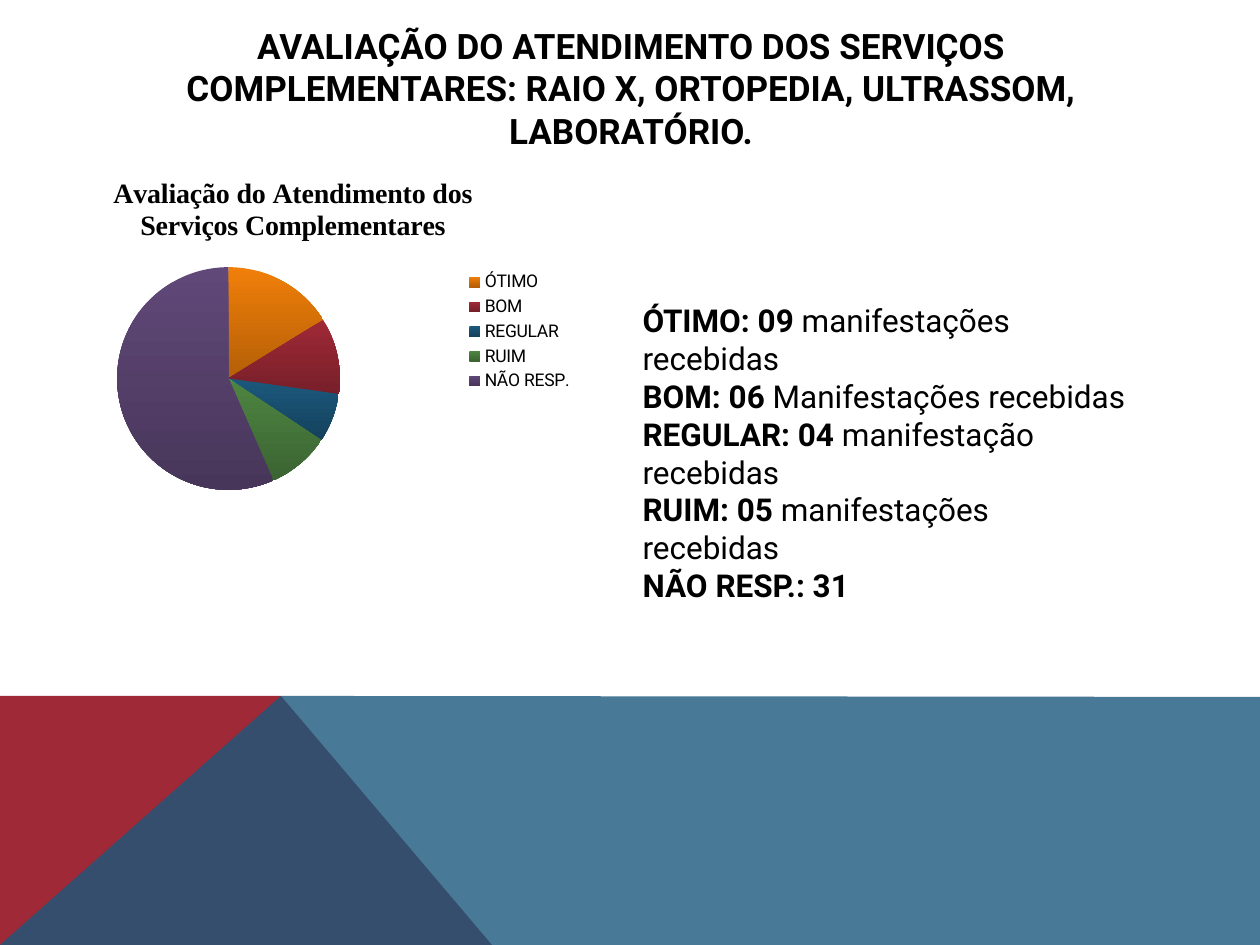
from dataclasses import dataclass

from lxml import etree
from pptx import Presentation
from pptx import util as u
from pptx.chart.data import CategoryChartData
from pptx.dml.color import RGBColor
from pptx.enum import chart as ch, text
from pptx.oxml.ns import qn

PX = u.Inches(1) / 126


@dataclass(frozen=True)
class Theme:
    """Colours, fonts and type sizes of the slide."""
    ink: str = "000000"
    red: str = "9F2936"
    blue: str = "1B587C"
    slices: tuple = ("F07F09", "9F2936", "1B587C", "4E8542", "604878")
    sans: str = "Roboto"
    serif: str = "Times New Roman"
    title: int = 20
    body: int = 18
    chart_title: int = 16
    legend: int = 10


T = Theme()
RESULTS = [
    ("ÓTIMO: 09", " manifestações recebidas"),
    ("BOM: 06", " Manifestações recebidas"),
    ("REGULAR: 04", " manifestação recebidas"),
    ("RUIM: 05", " manifestações recebidas"),
    ("NÃO RESP.: 31", ""),
]
SHARES = {"ÓTIMO": 16, "BOM": 11, "REGULAR": 7, "RUIM": 9, "NÃO RESP.": 56}


def px(n):
    """Turn pixels into EMU."""
    return u.Emu(round(n * PX))


def place(sp, x, y, w, h):
    """Set the position and size of a shape."""
    sp.left, sp.top, sp.width, sp.height = map(px, (x, y, w, h))


def style(font, size, name=T.sans, bold=False):
    """Format a font in the ink colour."""
    font.size, font.name, font.bold = u.Pt(size), name, bold
    font.color.rgb = RGBColor.from_string(T.ink)


def add_run(p, words, size, name=T.sans, bold=False):
    """Append a formatted run to a paragraph."""
    r = p.add_run()
    r.text = words
    style(r.font, size, name, bold)


def add_band(s, points, color, alpha=100):
    """Draw a filled polygon with the given opacity in percent."""
    fb = s.shapes.build_freeform(*points[0], scale=PX)
    fb.add_line_segments(points[1:], close=True)
    sp = fb.convert_to_shape()
    sp.shadow.inherit = False
    sp.line.fill.background()
    sp.fill.solid()
    sp.fill.fore_color.rgb = RGBColor.from_string(color)
    if alpha < 100:
        clr = sp.fill._xPr.find(".//" + qn("a:srgbClr"))
        etree.SubElement(clr, qn("a:alpha"), val=str(alpha * 1000))


def fill_title(sp, words):
    """Write the slide title."""
    place(sp, 113, 50, 1036, 76)
    tf = sp.text_frame
    tf.auto_size = text.MSO_AUTO_SIZE.NONE
    tf.vertical_anchor = text.MSO_ANCHOR.MIDDLE
    p = tf.paragraphs[0]
    p.alignment = text.PP_ALIGN.CENTER
    add_run(p, words, T.title, bold=True)


def fill_list(sp, rows):
    """Write unbulleted rows with a bold label and a plain remainder."""
    place(sp, 630, 295, 512, 320)
    tf = sp.text_frame
    tf.auto_size = text.MSO_AUTO_SIZE.NONE
    for i, (label, rest) in enumerate(rows):
        p = tf.add_paragraph() if i else tf.paragraphs[0]
        p.space_before = u.Pt(0)
        pPr = p._p.get_or_add_pPr()
        pPr.set("marL", "0")
        pPr.set("indent", "0")
        etree.SubElement(pPr, qn("a:buNone"))
        add_run(p, label, T.body, bold=True)
        if rest:
            add_run(p, rest, T.body)


def add_pie(s, title, shares):
    """Add the pie chart with its title, legend and shaded slices."""
    data = CategoryChartData()
    data.categories = list(shares)
    data.add_series("Series 1", list(shares.values()))
    chart = s.shapes.add_chart(
        ch.XL_CHART_TYPE.PIE, 0, px(157), px(586), px(349), data).chart
    style(chart.font, T.legend)
    chart.has_title = True
    add_run(chart.chart_title.text_frame.paragraphs[0], title,
            T.chart_title, T.serif, True)
    chart.has_legend = True
    chart.legend.position = ch.XL_LEGEND_POSITION.RIGHT
    chart.legend.include_in_layout = True
    plot = chart.plots[0]
    plot.vary_by_categories = True
    for i, color in enumerate(T.slices):
        fmt = plot.series[0].points[i].format
        fmt.line.fill.background()
        fmt.fill.gradient()
        fmt.fill.gradient_angle = 270
        for stop, shade in zip(fmt.fill.gradient_stops, (0, -0.25)):
            stop.color.rgb = RGBColor.from_string(color)
            stop.color.brightness = shade
    set_plot_area(chart, x=0.2, y=0.31, w=0.38, h=0.65)


def set_plot_area(chart, **box):
    """Fix the inner plot area as fractions of the chart."""
    area = chart._chartSpace.find(".//" + qn("c:plotArea"))
    layout = area.find(qn("c:layout"))
    if layout is None:
        layout = etree.Element(qn("c:layout"))
        area.insert(0, layout)
    manual = etree.SubElement(layout, qn("c:manualLayout"))
    settings = {"layoutTarget": "inner", "xMode": "edge", "yMode": "edge", **box}
    for tag, val in settings.items():
        etree.SubElement(manual, qn("c:" + tag), val=str(val))


def main():
    """Build the slide and save it."""
    prs = Presentation()
    prs.slide_width, prs.slide_height = px(1260), px(945)
    s = prs.slides.add_slide(prs.slide_layouts[1])
    add_band(s, [(0, 945), (0, 696), (281, 696), (492, 945)], T.red)
    add_band(s, [(0, 945), (281, 696), (1260, 697), (1260, 945)], T.blue, 80)
    fill_title(s.shapes.title, "AVALIAÇÃO DO ATENDIMENTO DOS SERVIÇOS COMPLEMENTARES: "
               "RAIO X, ORTOPEDIA, ULTRASSOM, LABORATÓRIO.")
    add_pie(s, "Avaliação do Atendimento dos Serviços Complementares", SHARES)
    fill_list(s.placeholders[1], RESULTS)
    prs.save("out.pptx")


if __name__ == "__main__":
    main()
